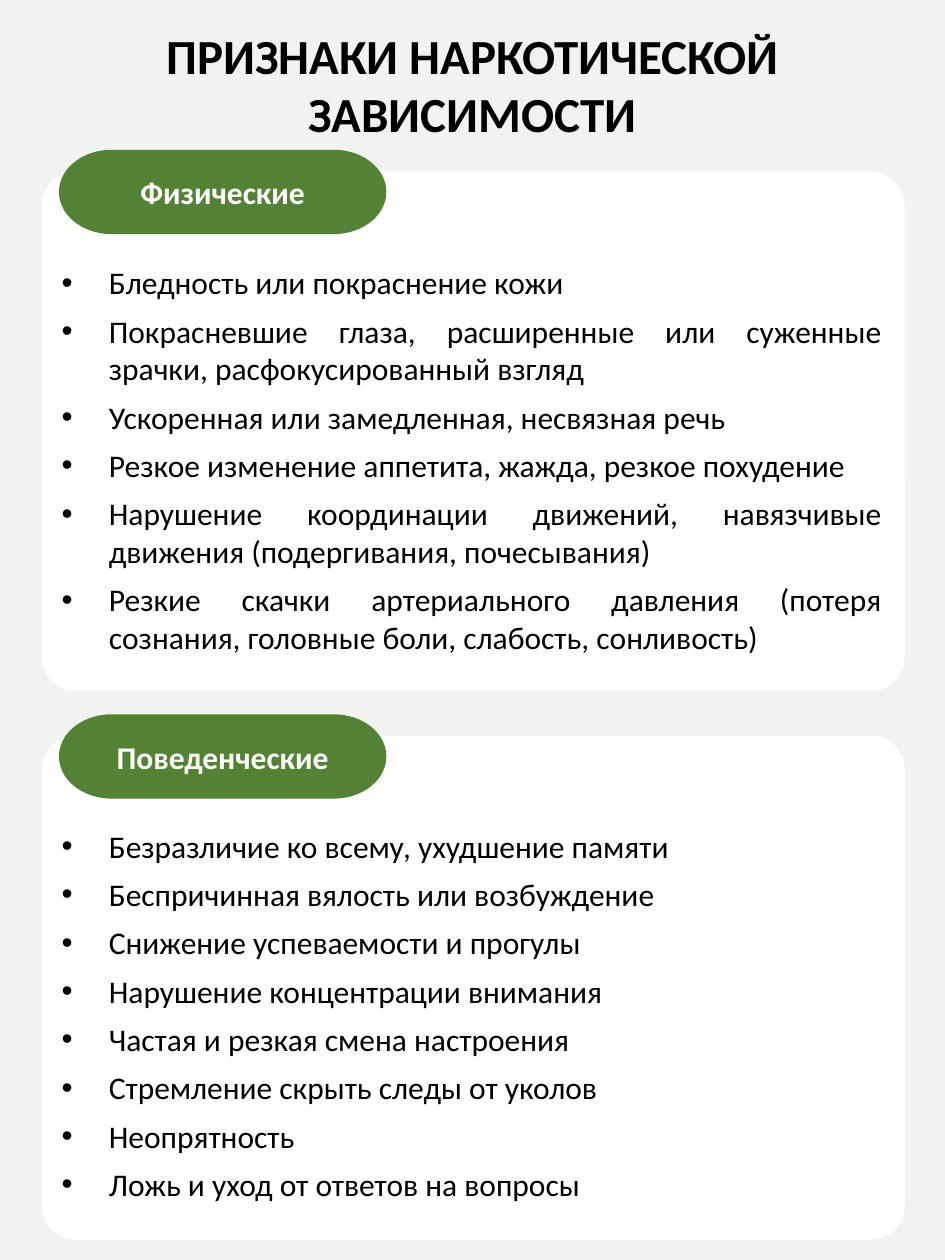
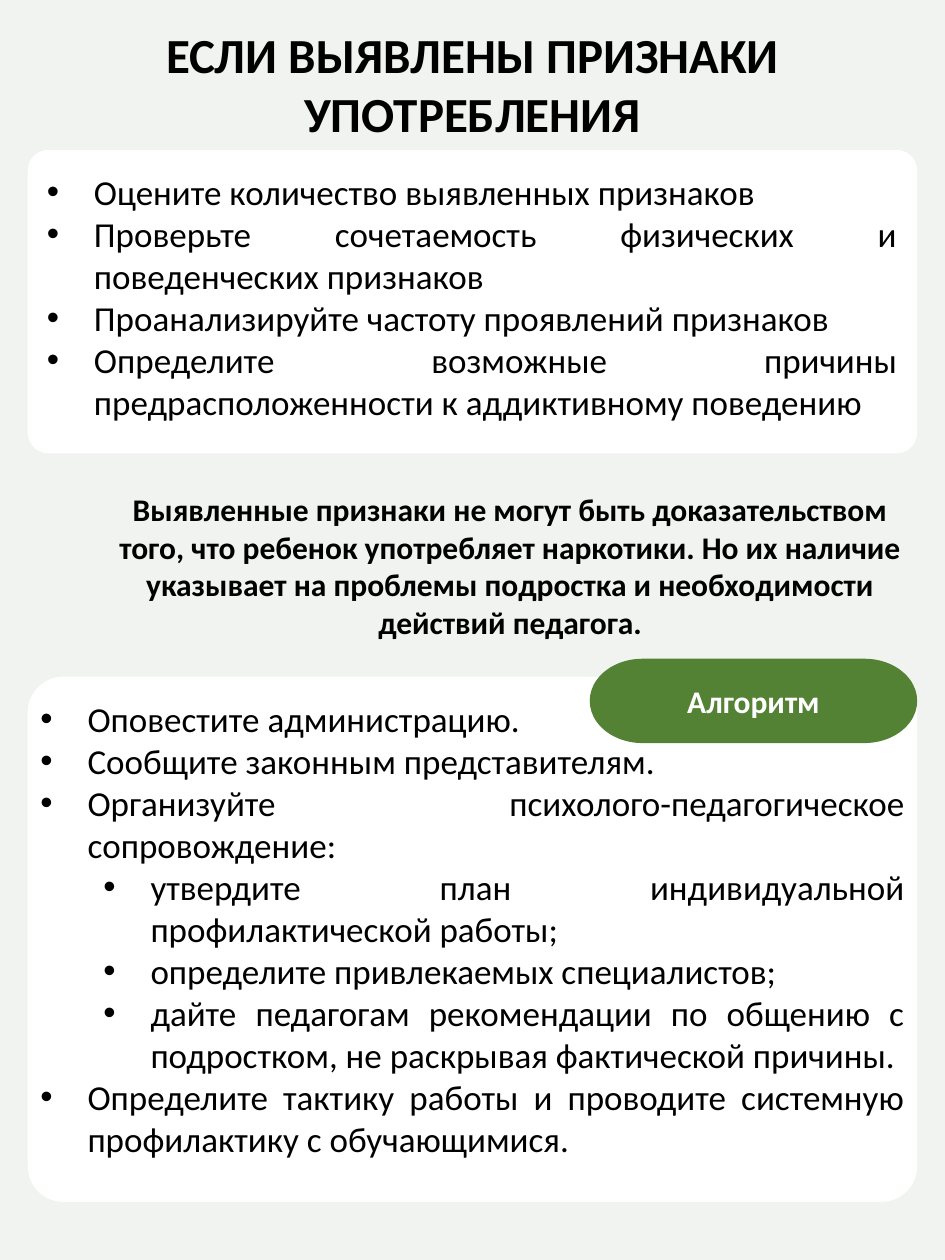
from dataclasses import dataclass
from typing import NamedTuple

from lxml import etree
from pptx import Presentation
from pptx.dml.color import RGBColor
from pptx.enum.shapes import MSO_SHAPE
from pptx.enum.text import MSO_ANCHOR, MSO_AUTO_SIZE, PP_ALIGN
from pptx.oxml.ns import qn
from pptx.util import Cm, Pt

PANEL_SHAPE = MSO_SHAPE.ROUNDED_RECTANGLE
TAG_SHAPE = MSO_SHAPE.FLOWCHART_TERMINATOR
CENTER = PP_ALIGN.CENTER
JUSTIFY = PP_ALIGN.JUSTIFY
TOP = MSO_ANCHOR.TOP
MIDDLE = MSO_ANCHOR.MIDDLE
FIT_SHAPE = MSO_AUTO_SIZE.SHAPE_TO_FIT_TEXT

COLORS = {
    "background": "F1F3F0",
    "panel": "FFFFFF",
    "tag": "548235",
    "text": "000000",
    "tag_text": "FFFFFF",
}
FONT = "Calibri"
TWO_CONTENT_LAYOUT = 3
BULLET_INDENT = 0.95
LEVEL_INDENT = 1.27
TAG_WIDTH, TAG_HEIGHT = 6.6, 1.7


class Box(NamedTuple):
    left: float
    top: float
    width: float
    height: float

    def lengths(self) -> tuple:
        return tuple(Cm(value) for value in self)


class Item(NamedTuple):
    text: str
    level: int = 0


@dataclass
class Section:
    panel: Box
    body: Box
    items: list
    tag: str = ""
    tag_left: float = 0
    tag_top: float = 0


@dataclass
class Page:
    title: str
    title_box: Box
    text_size: int
    space_before: int
    sections: list
    note: str = ""


NOTE_BOX = Box(2.08, 9.75, 16.41, 3.33)

PAGES = [
    Page(
        "ПРИЗНАКИ НАРКОТИЧЕСКОЙ ЗАВИСИМОСТИ",
        Box(0, 0.38, 19.05, 2.64), 18, 6,
        [
            Section(
                Box(0.84, 3.45, 17.4, 10.49),
                Box(0.99, 5.18, 17.04, 8.26),
                [
                    Item("Бледность или покраснение кожи"),
                    Item("Покрасневшие глаза, расширенные или суженные зрачки, "
                         "расфокусированный взгляд"),
                    Item("Ускоренная или замедленная, несвязная речь"),
                    Item("Резкое изменение аппетита, жажда, резкое похудение"),
                    Item("Нарушение координации движений, навязчивые движения "
                         "(подергивания, почесывания)"),
                    Item("Резкие скачки артериального давления (потеря сознания, "
                         "головные боли, слабость, сонливость)"),
                ],
                "Физические", 1.19, 3.02,
            ),
            Section(
                Box(0.84, 14.83, 17.4, 10.16),
                Box(0.99, 16.54, 17.4, 7.9),
                [
                    Item("Безразличие ко всему, ухудшение памяти"),
                    Item("Беспричинная вялость или возбуждение"),
                    Item("Снижение успеваемости и прогулы"),
                    Item("Нарушение концентрации внимания"),
                    Item("Частая и резкая смена настроения"),
                    Item("Стремление скрыть следы от уколов"),
                    Item("Неопрятность"),
                    Item("Ложь и уход от ответов на вопросы"),
                ],
                "Поведенческие", 1.19, 14.4,
            ),
        ],
    ),
    Page(
        "ЕСЛИ ВЫЯВЛЕНЫ ПРИЗНАКИ УПОТРЕБЛЕНИЯ",
        Box(0.56, 0.36, 17.93, 2.64), 20, 0,
        [
            Section(
                Box(0.56, 3.02, 17.93, 6.12),
                Box(0.69, 3.3, 17.65, 5.38),
                [
                    Item("Оцените количество выявленных признаков"),
                    Item("Проверьте сочетаемость физических и поведенческих признаков"),
                    Item("Проанализируйте частоту проявлений признаков"),
                    Item("Определите возможные причины предрасположенности "
                         "к аддиктивному поведению"),
                ],
            ),
            Section(
                Box(0.56, 13.64, 17.93, 10.59),
                Box(0.56, 13.94, 17.93, 9.65),
                [
                    Item("Оповестите администрацию."),
                    Item("Сообщите законным представителям."),
                    Item("Организуйте психолого-педагогическое сопровождение:"),
                    Item("утвердите план индивидуальной профилактической работы;", 1),
                    Item("определите привлекаемых специалистов;", 1),
                    Item("дайте педагогам рекомендации по общению с подростком, "
                         "не раскрывая фактической причины.", 1),
                    Item("Определите тактику работы и проводите системную "
                         "профилактику с обучающимися."),
                ],
                "Алгоритм", 11.89, 13.28,
            ),
        ],
        "Выявленные признаки не могут быть доказательством того, что ребенок "
        "употребляет наркотики. Но их наличие указывает на проблемы подростка "
        "и необходимости действий педагога.",
    ),
]


def color(name: str) -> RGBColor:
    return RGBColor.from_string(COLORS[name])


def place(shape, box: Box) -> None:
    shape.left, shape.top, shape.width, shape.height = box.lengths()


def format_paragraph(paragraph, size: int, alignment, bold: bool = False,
                     color_name: str = "text", space_before: int = 0) -> None:
    paragraph.alignment = alignment
    paragraph.line_spacing = 1.0
    paragraph.space_before = Pt(space_before)
    for run in paragraph.runs:
        run.font.name = FONT
        run.font.size = Pt(size)
        run.font.bold = bold
        run.font.color.rgb = color(color_name)


def write_heading(shape, text: str, size: int, color_name: str = "text",
                  anchor=TOP) -> None:
    text_frame = shape.text_frame
    text_frame.word_wrap = True
    text_frame.vertical_anchor = anchor
    text_frame.text = text
    format_paragraph(text_frame.paragraphs[0], size, CENTER, True, color_name)


def add_bullet(paragraph, level: int) -> None:
    properties = paragraph._p.get_or_add_pPr()
    properties.set("marL", str(Cm(BULLET_INDENT + level * LEVEL_INDENT)))
    properties.set("indent", str(-Cm(BULLET_INDENT)))
    etree.SubElement(properties, qn("a:buFont"), typeface="Arial")
    etree.SubElement(properties, qn("a:buChar"), char="•")


def write_list(shape, items: list, size: int, space_before: int) -> None:
    text_frame = shape.text_frame
    text_frame.text = "\n".join(item.text for item in items)
    text_frame.word_wrap = True
    text_frame.vertical_anchor = TOP
    text_frame.auto_size = FIT_SHAPE
    for paragraph, item in zip(text_frame.paragraphs, items):
        paragraph.level = item.level
        format_paragraph(paragraph, size, JUSTIFY, space_before=space_before)
        add_bullet(paragraph, item.level)


def add_filled_shape(slide, kind, box: Box, color_name: str):
    shape = slide.shapes.add_shape(kind, *box.lengths())
    shape.shadow.inherit = False
    shape.fill.solid()
    shape.fill.fore_color.rgb = color(color_name)
    shape.line.fill.background()
    return shape


def add_section(slide, body, section: Section, page: Page) -> None:
    panel = add_filled_shape(slide, PANEL_SHAPE, section.panel, "panel")
    panel.adjustments[0] = 0.068
    slide.shapes.title.element.addprevious(panel.element)
    place(body, section.body)
    write_list(body, section.items, page.text_size, page.space_before)
    if section.tag:
        tag_box = Box(section.tag_left, section.tag_top, TAG_WIDTH, TAG_HEIGHT)
        tag = add_filled_shape(slide, TAG_SHAPE, tag_box, "tag")
        write_heading(tag, section.tag, 18, "tag_text", MIDDLE)


def add_page(presentation, page: Page) -> None:
    slide = presentation.slides.add_slide(presentation.slide_layouts[TWO_CONTENT_LAYOUT])
    title, *bodies = slide.placeholders
    place(title, page.title_box)
    write_heading(title, page.title, 28)
    title.text_frame.auto_size = FIT_SHAPE
    for body, section in zip(bodies, page.sections):
        add_section(slide, body, section, page)
    if page.note:
        note = slide.shapes.add_textbox(*NOTE_BOX.lengths())
        write_heading(note, page.note, 18)


def main() -> None:
    presentation = Presentation()
    presentation.slide_width = Cm(19.05)
    presentation.slide_height = Cm(25.4)
    background = presentation.slide_master.background.fill
    background.solid()
    background.fore_color.rgb = color("background")
    for page in PAGES:
        add_page(presentation, page)
    presentation.save("out.pptx")


if __name__ == "__main__":
    main()
